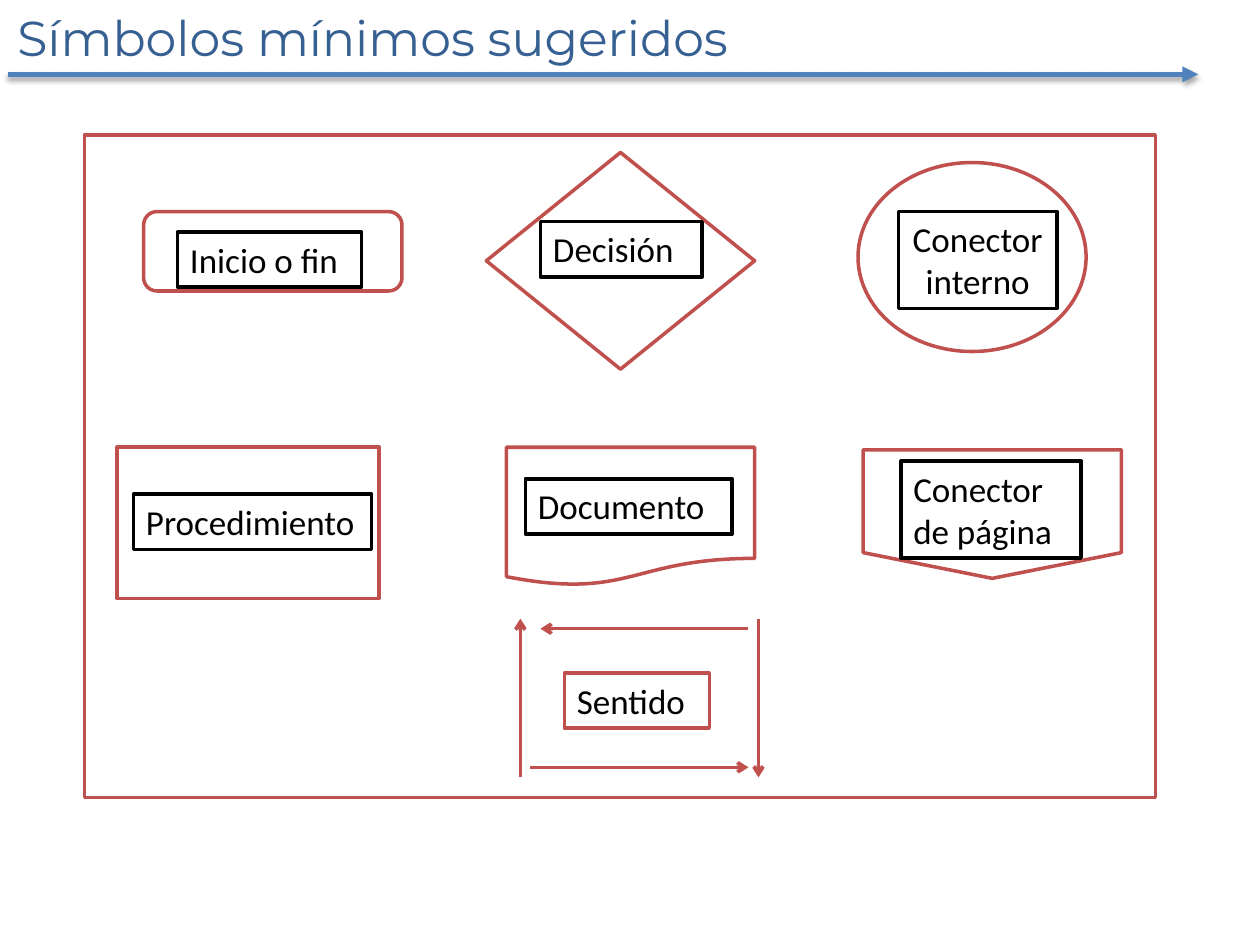
from lxml import etree
from pptx import Presentation
from pptx import util as u
from pptx.dml.color import RGBColor
from pptx.enum import shapes, text
from pptx.oxml import ns

HUES = {"red": "C0504D", "blue": "4F81BD", "navy": "376092",
        "ink": "000000", "paper": "FFFFFF"}
FRAME = {"word_wrap": True, "auto_size": text.MSO_AUTO_SIZE.SHAPE_TO_FIT_TEXT,
         "vertical_anchor": text.MSO_ANCHOR.TOP}
KIND = shapes.MSO_SHAPE
LEFT, MID = text.PP_ALIGN.LEFT, text.PP_ALIGN.CENTER

deck = Presentation()
deck.slide_width, deck.slide_height = u.Inches(10), u.Inches(7.5)
COL, ROW = deck.slide_width / 100, deck.slide_height / 75
slide = deck.slides.add_slide(deck.slide_layouts[6])

SYMBOLS = [
    (KIND.ROUNDED_RECTANGLE, (4.7, 6.1, 20.5, 6.3),
     "Inicio o fin", (2.7, 1.6, 14.6, 4.4), LEFT),
    (KIND.FLOWCHART_DECISION, (31.9, 1.4, 21.3, 17.2),
     "Decisión", (4.3, 5.5, 12.8, 4.4), LEFT),
    (KIND.OVAL, (61.4, 2.2, 18.1, 15),
     "Conector\ninterno", (3.2, 3.9, 12.6, 7.7), MID),
    (KIND.FLOWCHART_PROCESS, (2.6, 24.8, 20.8, 12),
     "Procedimiento", (1.3, 3.7, 18.9, 4.4), LEFT),
    (KIND.FLOWCHART_DOCUMENT, (33.5, 24.8, 19.7, 11),
     "Documento", (1.5, 2.5, 16.4, 4.4), LEFT),
    (KIND.FLOWCHART_OFFPAGE_CONNECTOR, (61.8, 25, 20.5, 10.2),
     "Conector\nde página", (3, 0.9, 14.3, 7.7), LEFT),
]


def grid(x, y):
    return round(x * COL), round(y * ROW)


def inner(box, part):
    return box[0] + part[0], box[1] + part[1], part[2], part[3]


def apply(item, values):
    for key, value in values.items():
        setattr(item, key, value)


def tint(name):
    return RGBColor.from_string(HUES[name])


def write(shape, words, face, size, hue, align=LEFT):
    frame = shape.text_frame
    frame.text = words
    apply(frame, FRAME)
    for para in frame.paragraphs:
        para.alignment = align
        apply(para.font, {"name": face, "size": u.Pt(size)})
        para.font.color.rgb = tint(hue)


def draw(kind, box, hue="red"):
    shape = slide.shapes.add_shape(kind, *grid(*box[:2]), *grid(*box[2:]))
    shape.shadow.inherit = False
    shape.fill.solid()
    shape.fill.fore_color.rgb = tint("paper")
    shape.line.color.rgb = tint(hue)
    shape.line.width = u.Pt(2)
    return shape


def label(box, words, align=LEFT, hue="ink"):
    write(draw(KIND.RECTANGLE, box, hue), words, "Calibri", 20, "ink", align)


def arrow(start, end, hue="red", width=2, head="arrow"):
    line = slide.shapes.add_connector(
        shapes.MSO_CONNECTOR.STRAIGHT, *grid(*start), *grid(*end))
    line.line.color.rgb = tint(hue)
    line.line.width = u.Pt(width)
    etree.SubElement(line.line._get_or_add_ln(), ns.qn("a:tailEnd"), type=head)
    props = line._element.spPr
    return etree.SubElement(props, ns.qn("a:effectLst"))


def shade(effect):
    shadow = etree.SubElement(
        effect, ns.qn("a:outerShdw"), blurRad=str(u.Pt(3.1)),
        dist=str(u.Pt(1.8)), dir="5400000", rotWithShape="0")
    color = etree.SubElement(shadow, ns.qn("a:srgbClr"), val=HUES["ink"])
    etree.SubElement(color, ns.qn("a:alpha"), val="35000")


def header(box):
    x, y, wide, high = box
    shade(arrow((x + 0.2, y + 5.8), (x + 94.7, y + 5.8), "blue", 3, "triangle"))
    title = slide.shapes.add_textbox(*grid(x, y), *grid(wide, high))
    write(title, "Símbolos mínimos sugeridos", "Montserrat", 28, "navy")


def symbol(box, kind, words, part, align):
    draw(kind, box)
    label(inner(box, part), words, align)


def flow(box):
    x, y, wide, high = box
    right, low, gap = x + wide, y + high, 0.8
    label(inner(box, (3.5, 4.3, 11.5, 4.4)), "Sentido", hue="red")
    for start, end in [((x + gap, low - gap), (right - gap, low - gap)),
                       ((x, low), (x, y)),
                       ((right, y), (right, low)),
                       ((right - gap, y + gap), (x + 2 * gap, y + gap))]:
        arrow(start, end)


def panel(box):
    draw(KIND.RECTANGLE, box)
    for kind, place, words, part, align in SYMBOLS:
        symbol(inner(box, place), kind, words, part, align)
    flow(inner(box, (34.6, 38.4, 18.9, 12.6)))


panel((6.7, 10.7, 85, 52.6))
header((0.4, 0.1, 79.7, 5.7))
deck.save("out.pptx")
